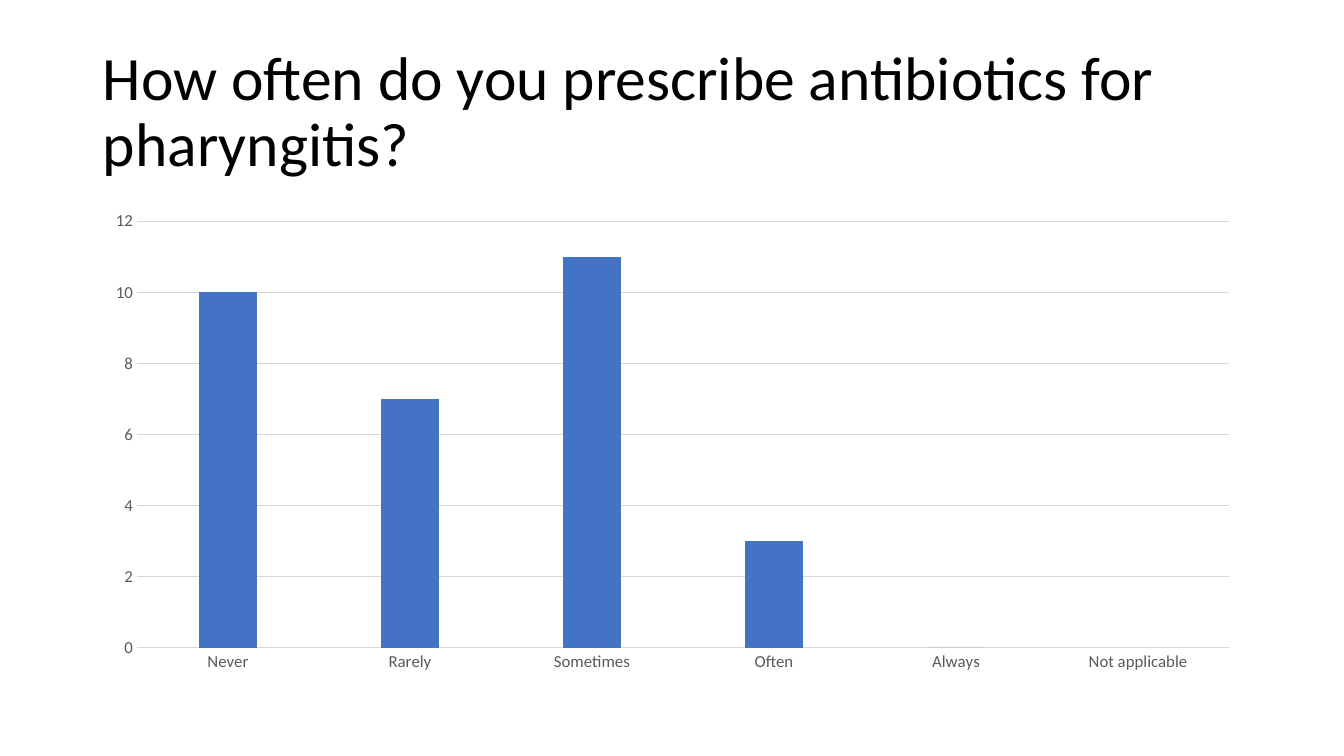
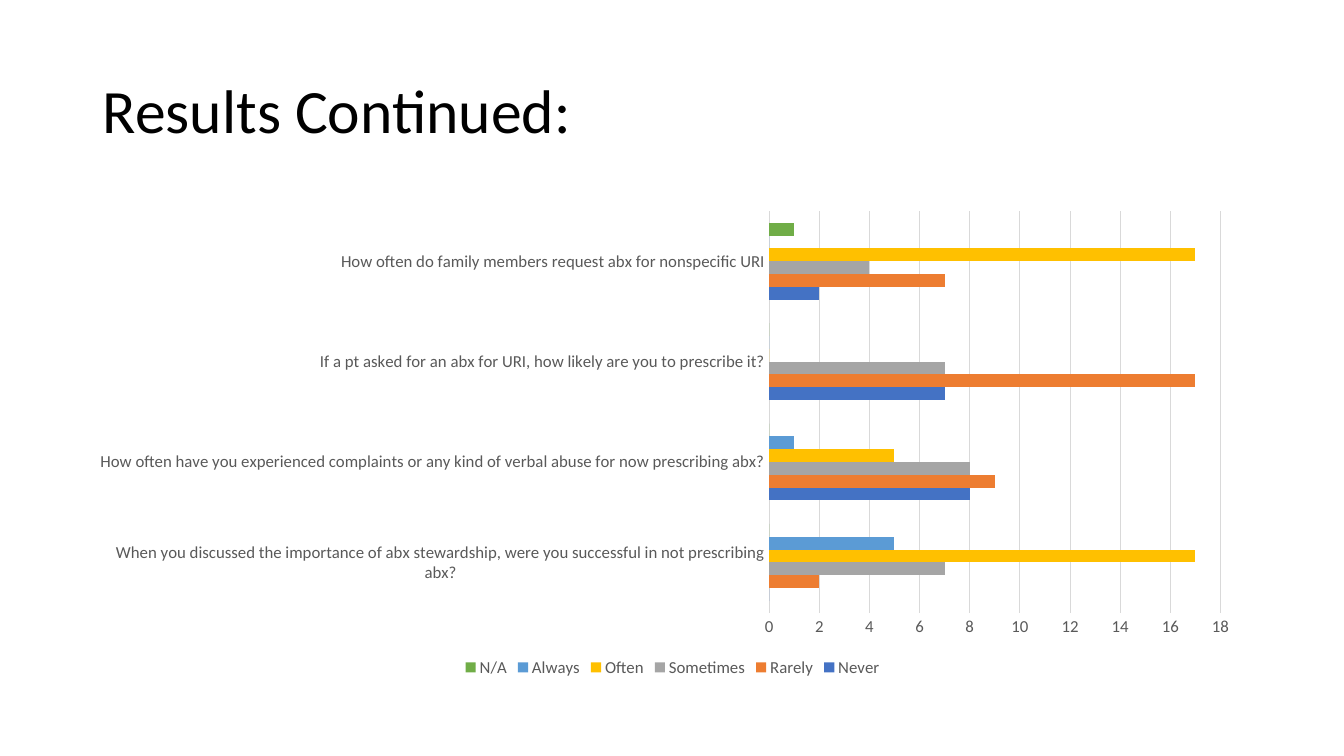
from pptx import Presentation
from pptx.chart.data import CategoryChartData
from pptx.dml.color import RGBColor
from pptx.enum.chart import XL_CHART_TYPE, XL_LEGEND_POSITION, XL_TICK_MARK
from pptx.enum.text import MSO_ANCHOR, MSO_AUTO_SIZE, PP_ALIGN
from pptx.util import Inches, Pt

COLUMNS = XL_CHART_TYPE.COLUMN_CLUSTERED
BARS = XL_CHART_TYPE.BAR_CLUSTERED
NO_TICK = XL_TICK_MARK.NONE
LEGEND_BOTTOM = XL_LEGEND_POSITION.BOTTOM

FONT = "Calibri"
BLACK, LABEL_GREY, GRID_GREY = "000000", "595959", "D9D9D9"
SERIES_COLORS = ["4472C4", "ED7D31", "A5A5A5", "FFC000", "5B9BD5", "70AD47"]

SLIDE_W, SLIDE_H = 13.33, 7.5
MARGIN = 0.92
CONTENT_W = 11.5
TITLE_BOX = (MARGIN, 0.4, CONTENT_W, 1.45)
CHART_BOX = (MARGIN, 2, CONTENT_W, 4.76)

SLIDES = [
    {
        "title": "How often do you prescribe antibiotics for pharyngitis?",
        "kind": COLUMNS, "gap": 219, "overlap": -27, "axis_max": 12, "legend": False,
        "categories": ["Never", "Rarely", "Sometimes", "Often", "Always", "Not applicable"],
        "series": {"Series 1": [10, 7, 11, 3, 0, None]},
    },
    {
        "title": "Results Continued:",
        "kind": BARS, "gap": 182, "overlap": 0, "axis_max": 18, "legend": True,
        "categories": [
            "When you discussed the importance of abx stewardship, "
            "were you successful in not prescribing abx?",
            "How often have you experienced complaints or any kind of verbal abuse "
            "for now prescribing abx?",
            "If a pt asked for an abx for URI, how likely are you to prescribe it?",
            "How often do family members request abx for nonspecific URI",
        ],
        "series": {
            "Never": [0, 8, 7, 2],
            "Rarely": [2, 9, 17, 7],
            "Sometimes": [7, 8, 7, 4],
            "Often": [17, 5, 0, 17],
            "Always": [5, 1, 0, 0],
            "N/A": [0, 0, 0, 1],
        },
    },
]


def rgb(color):
    return RGBColor.from_string(color)


def style_font(font, size, color):
    font.name, font.size = FONT, Pt(size)
    font.color.rgb = rgb(color)


def style_line(line):
    line.color.rgb = rgb(GRID_GREY)
    line.width = Pt(0.75)


def set_title(slide, text):
    title = slide.shapes.title
    title.left, title.top, title.width, title.height = map(Inches, TITLE_BOX)
    frame = title.text_frame
    frame.word_wrap = True
    frame.auto_size = MSO_AUTO_SIZE.NONE
    frame.vertical_anchor = MSO_ANCHOR.MIDDLE
    paragraph = frame.paragraphs[0]
    paragraph.alignment = PP_ALIGN.LEFT
    paragraph.line_spacing = 0.9
    run = paragraph.add_run()
    run.text = text
    style_font(run.font, 44, BLACK)


def style_axes(chart, axis_max):
    answers, counts = chart.category_axis, chart.value_axis
    for axis in (answers, counts):
        axis.major_tick_mark = axis.minor_tick_mark = NO_TICK
        style_font(axis.tick_labels.font, 12, LABEL_GREY)
    style_line(answers.format.line)
    counts.format.line.fill.background()
    counts.has_major_gridlines = True
    style_line(counts.major_gridlines.format.line)
    counts.minimum_scale, counts.maximum_scale, counts.major_unit = 0, axis_max, 2


def add_survey_chart(slide, survey):
    data = CategoryChartData()
    data.categories = survey["categories"]
    for name, values in survey["series"].items():
        data.add_series(name, values)
    chart = slide.shapes.add_chart(survey["kind"], *map(Inches, CHART_BOX), data).chart
    style_font(chart.font, 10, BLACK)
    chart.has_title = False
    style_axes(chart, survey["axis_max"])

    plot = chart.plots[0]
    plot.vary_by_categories = False
    plot.gap_width, plot.overlap = survey["gap"], survey["overlap"]
    for series, color in zip(plot.series, SERIES_COLORS):
        series.format.fill.solid()
        series.format.fill.fore_color.rgb = rgb(color)
        series.invert_if_negative = False

    chart.has_legend = survey["legend"]
    if chart.has_legend:
        chart.legend.position = LEGEND_BOTTOM
        chart.legend.include_in_layout = False
        style_font(chart.legend.font, 12, LABEL_GREY)


def main():
    deck = Presentation()
    deck.slide_width, deck.slide_height = Inches(SLIDE_W), Inches(SLIDE_H)
    title_only = deck.slide_layouts.get_by_name("Title Only")
    for survey in SLIDES:
        slide = deck.slides.add_slide(title_only)
        set_title(slide, survey["title"])
        add_survey_chart(slide, survey)
    deck.save("out.pptx")


if __name__ == "__main__":
    main()
